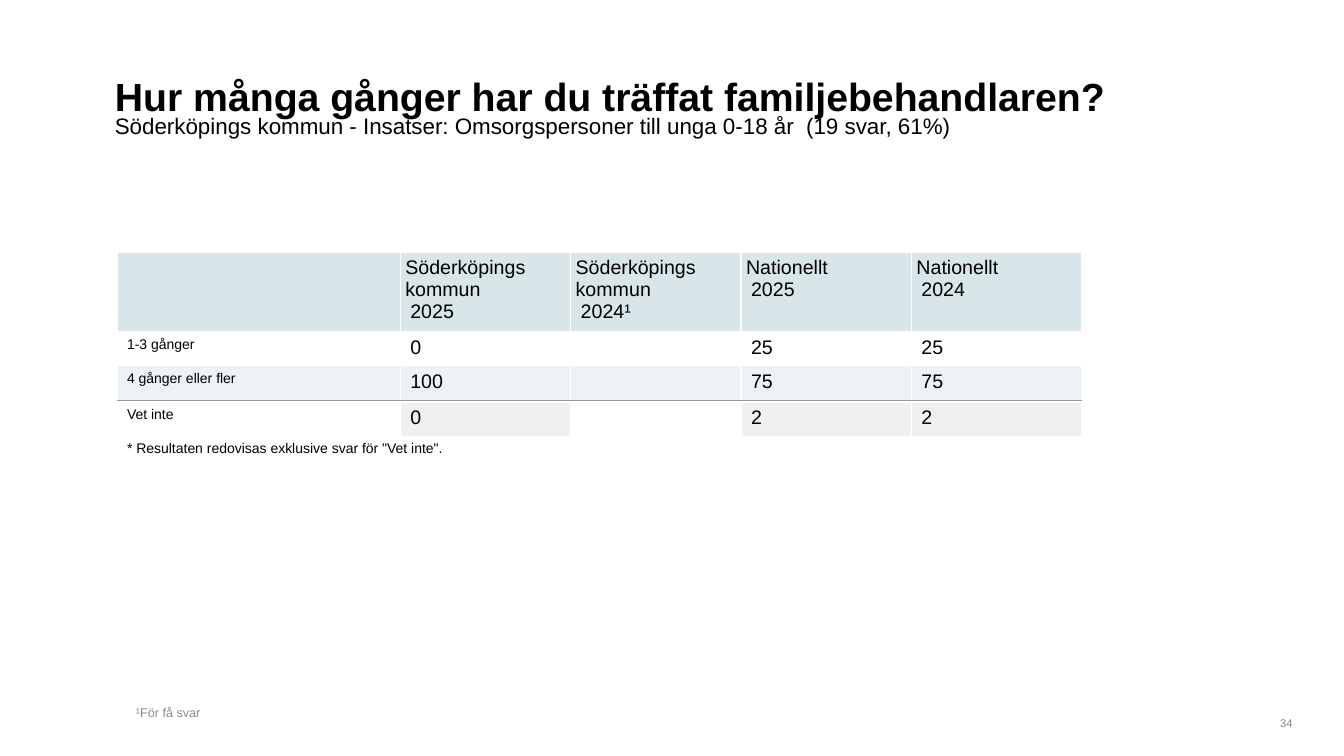
from lxml import etree
from pptx import Presentation
from pptx.dml.color import RGBColor
from pptx.enum import text as t
from pptx.oxml.ns import qn
from pptx.util import Inches, Pt

FONT = "Arial"
BLACK = RGBColor(0x00, 0x00, 0x00)
WHITE = RGBColor(0xFF, 0xFF, 0xFF)
NOTE_GREY = RGBColor(0x8C, 0x8C, 0x8C)
NUMBER_GREY = RGBColor(0x89, 0x89, 0x89)
HEADER_BLUE = RGBColor(0xD9, 0xE6, 0xE9)
BAND_BLUE = RGBColor(0xED, 0xF3, 0xF4)
RULE_GREY = RGBColor(0x99, 0x99, 0x99)
UNSURE_GREY = RGBColor(0xF0, 0xF0, 0xF0)

COLUMN_WIDTHS = [2.81, 1.69, 1.69, 1.69, 1.69]
RULE_ROW, REMARK_ROW = 3, 5
# Height, fill of the label cell, fill of the value cells, texts
ROWS = [
    (0.79, HEADER_BLUE, HEADER_BLUE,
     ["", "Söderköpings kommun\n2025", "Söderköpings kommun\n2024¹",
      "Nationellt\n2025", "Nationellt\n2024"]),
    (0.34, None, None, ["1-3 gånger", "0", "", "25", "25"]),
    (0.34, BAND_BLUE, BAND_BLUE, ["4 gånger eller fler", "100", "", "75", "75"]),
    (0.02, RULE_GREY, RULE_GREY, [""] * 5),
    (0.34, None, UNSURE_GREY, ["Vet inte", "0", "", "2", "2"]),
    (0.28, None, None,
     ['* Resultaten redovisas exklusive svar för "Vet inte".'] + [""] * 4),
]


def write(frame, content, size=14, color=BLACK, bold=False, align=None):
    """Fill a text frame, one paragraph for each line of content."""
    for index, line in enumerate(content.split("\n")):
        paragraph = frame.paragraphs[0] if index == 0 else frame.add_paragraph()
        if align is not None:
            paragraph.alignment = align
        if not line:
            etree.SubElement(paragraph._p, qn("a:endParaRPr"), sz=str(size * 100))
            continue
        run = paragraph.add_run()
        run.text = line
        run.font.name = FONT
        run.font.size = Pt(size)
        run.font.bold = bold
        run.font.color.rgb = color


def set_frame(frame, anchor, top_inset=0.05, wrap=True):
    frame.word_wrap = wrap
    frame.auto_size = t.MSO_AUTO_SIZE.NONE
    frame.vertical_anchor = anchor
    frame.margin_left = frame.margin_right = Inches(0.1)
    frame.margin_top, frame.margin_bottom = Inches(top_inset), Inches(0.05)


def add_text(slide, box, content, anchor=t.MSO_ANCHOR.BOTTOM, top_inset=0.05, **style):
    frame = slide.shapes.add_textbox(*map(Inches, box)).text_frame
    set_frame(frame, anchor, top_inset)
    write(frame, content, **style)


def set_borders(cell, visible):
    """Draw white lines on the named sides and none on the others."""
    properties = cell._tc.get_or_add_tcPr()
    for side in "LRTB":
        line = etree.SubElement(properties, qn(f"a:ln{side}"), w=str(Pt(1)))
        if side in visible:
            fill = etree.SubElement(line, qn("a:solidFill"))
            etree.SubElement(fill, qn("a:srgbClr"), val=str(WHITE))
        else:
            etree.SubElement(line, qn("a:noFill"))


def format_cell(cell, content, fill, size, inset=0.05, borders="LRTB"):
    cell.margin_left = cell.margin_right = Inches(inset)
    cell.margin_top = cell.margin_bottom = Inches(inset)
    write(cell.text_frame, content, size=size)
    if content:
        last = cell.text_frame.paragraphs[-1]._p.get_or_add_pPr()
        last.set("marL", str(Inches(0.05)))
        last.set("indent", "0")
    set_borders(cell, borders)
    if fill is None:
        cell.fill.background()
    else:
        cell.fill.solid()
        cell.fill.fore_color.rgb = fill


def add_answer_table(slide):
    height = sum(row[0] for row in ROWS)
    table = slide.shapes.add_table(
        len(ROWS), len(COLUMN_WIDTHS), Inches(1.16), Inches(2.5),
        Inches(sum(COLUMN_WIDTHS)), Inches(height)).table
    table.first_row = table.horz_banding = False
    for column, width in zip(table.columns, COLUMN_WIDTHS):
        column.width = Inches(width)
    for r, (height, label_fill, value_fill, texts) in enumerate(ROWS):
        table.rows[r].height = Inches(height)
        for c, content in enumerate(texts):
            fill = value_fill if c and (content or r != 4) else label_fill
            size = 14 if c else 10
            if r == RULE_ROW:
                format_cell(table.cell(r, c), content, fill, 1, inset=0, borders="B")
            else:
                borders = "LRT" if r == RULE_ROW - 1 else "LRTB"
                format_cell(table.cell(r, c), content, fill,
                            10 if r == REMARK_ROW else size, borders=borders)
    for r in (RULE_ROW, REMARK_ROW):
        table.cell(r, 0).merge(table.cell(r, len(COLUMN_WIDTHS) - 1))


def set_title(slide, content):
    title = slide.shapes.title
    title.left, title.top = Inches(1.04), Inches(0.62)
    title.width, title.height = Inches(11.25), Inches(0.42)
    set_frame(title.text_frame, t.MSO_ANCHOR.TOP, top_inset=0.1, wrap=False)
    write(title.text_frame, content, size=28, bold=True, align=t.PP_ALIGN.LEFT)


def main():
    presentation = Presentation()
    presentation.slide_width, presentation.slide_height = Inches(13.33), Inches(7.5)
    slide = presentation.slides.add_slide(presentation.slide_layouts[5])
    set_title(slide, "Hur många gånger har du träffat familjebehandlaren?")
    add_text(slide, (1.04, 1.04, 11.25, 0.42),
             "Söderköpings kommun - Insatser: Omsorgspersoner till unga 0-18 år  (19 svar, 61%)",
             anchor=t.MSO_ANCHOR.TOP, top_inset=0.07, size=16)
    add_answer_table(slide)
    add_text(slide, (1.25, 3.23, 7.6, 3.96), "¹För få svar", size=9, color=NOTE_GREY)
    add_text(slide, (12.5, 7.08, 0.42, 0.21), "34", size=8, color=NUMBER_GREY,
             align=t.PP_ALIGN.RIGHT)
    presentation.save("out.pptx")


if __name__ == "__main__":
    main()
